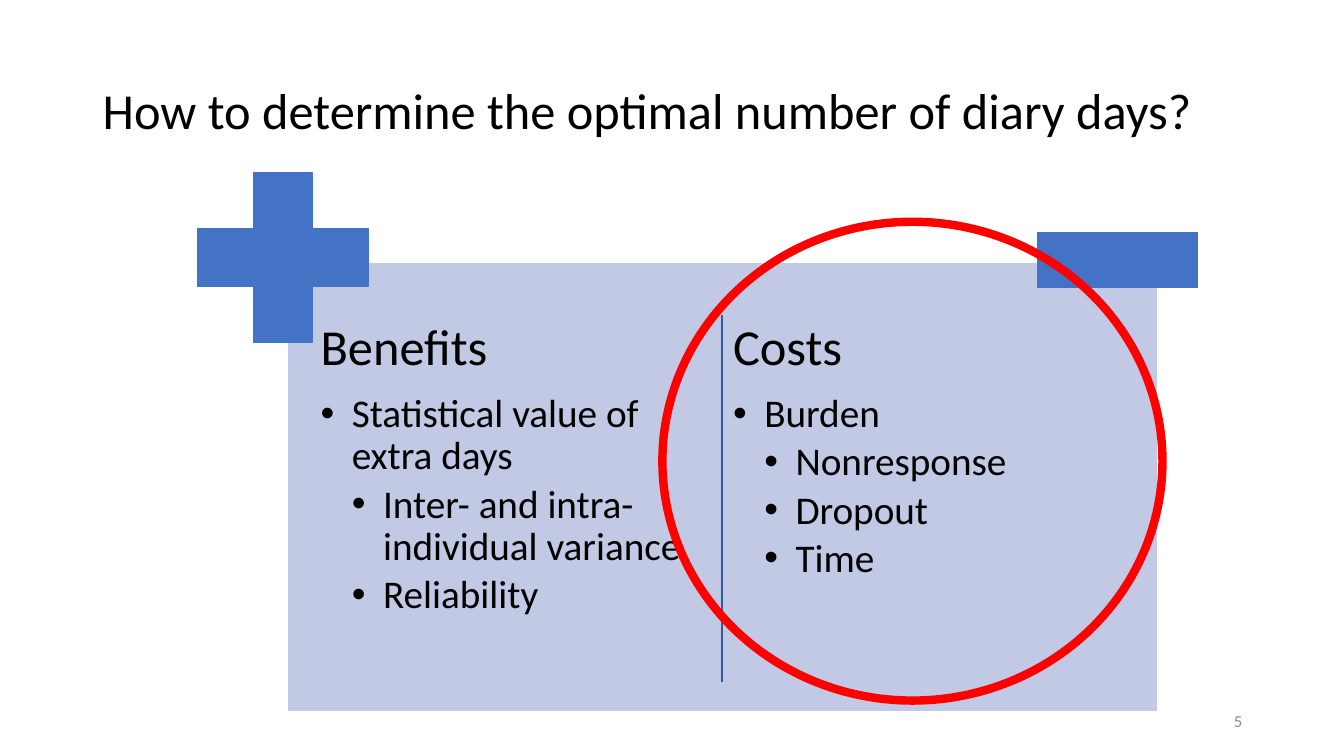
from lxml.etree import SubElement
from pptx import Presentation
from pptx.dml.color import RGBColor
from pptx.enum.shapes import MSO_CONNECTOR, MSO_SHAPE
from pptx.enum.text import MSO_ANCHOR, PP_ALIGN
from pptx.oxml.ns import qn
from pptx.util import Inches, Pt

INDENT = 0.31
COLUMN_LEFT, COLUMN_TOP, COLUMN_STEP = 3.11, 3.12, 4.09
COLUMN_WIDTH, COLUMN_HEIGHT = 4.01, 3.81
DIVIDER_X = COLUMN_LEFT + COLUMN_STEP - 0.04

columns = [
    [(0, "Benefits"), (1, "Statistical value of extra days"),
     (2, "Inter- and intra- individual variance"), (2, "Reliability")],
    [(0, "Costs"), (1, "Burden"), (2, "Nonresponse"), (2, "Dropout"), (2, "Time")],
]


def paint(format_, color):
    """Give a fill or a font one solid colour."""
    if hasattr(format_, "solid"):
        format_.solid()
        format_.fore_color.rgb = RGBColor.from_string(color)
    else:
        format_.color.rgb = RGBColor.from_string(color)


def add_text(box, paragraph, text, size, color="000000"):
    """Write one Calibri paragraph in a wrapping box."""
    box.text_frame.word_wrap = True
    paragraph.text = text
    paragraph.font.name = "Calibri"
    paragraph.font.size = Pt(size)
    paint(paragraph.font, color)


deck = Presentation()
deck.slide_width, deck.slide_height = Inches(13.33), Inches(7.5)
slide = deck.slides.add_slide(deck.slide_layouts[6])
shapes = slide.shapes

title = shapes.add_textbox(Inches(0.92), Inches(0.4), Inches(11.5), Inches(1.45))
title.text_frame.vertical_anchor = MSO_ANCHOR.MIDDLE
heading = title.text_frame.paragraphs[0]
heading.line_spacing = 0.9
add_text(title, heading, "How to determine the optimal number of diary days?", 36)

panel = shapes.add_shape(MSO_SHAPE.RECTANGLE, Inches(2.85), Inches(2.6), Inches(8.63), Inches(4.46))
paint(panel.fill, "C1C9E4")
paint(panel.line, "FFFFFF")
panel.line.width = Pt(1)
panel.shadow.inherit = False

for number, entries in enumerate(columns):
    column = shapes.add_textbox(Inches(COLUMN_LEFT + number * COLUMN_STEP), Inches(COLUMN_TOP),
                                Inches(COLUMN_WIDTH), Inches(COLUMN_HEIGHT))
    frame = column.text_frame
    frame.margin_left = frame.margin_right = frame.margin_top = frame.margin_bottom = Inches(0.07)
    for position, (level, text) in enumerate(entries):
        entry = frame.add_paragraph() if position else frame.paragraphs[0]
        entry.level = level
        entry.line_spacing = 0.9
        entry.space_after = Pt(4.2 if level else 12.6)
        if level:
            properties = entry._p.get_or_add_pPr()
            properties.set("marL", str(Inches(level * INDENT)))
            properties.set("indent", str(Inches(-INDENT)))
            SubElement(properties, qn("a:buFont"), typeface="Arial")
            SubElement(properties, qn("a:buChar"), char="•")
        add_text(column, entry, text, 28 if level else 36)

plus = shapes.add_shape(MSO_SHAPE.CROSS, Inches(1.96), Inches(1.71), Inches(1.69), Inches(1.69))
plus.adjustments[0] = 0.328
minus = shapes.add_shape(MSO_SHAPE.RECTANGLE, Inches(10.29), Inches(2.31), Inches(1.59), Inches(0.54))
for sign in (plus, minus):
    paint(sign.fill, "4472C4")
    paint(sign.line, "4472C4")
    sign.line.width = Pt(1)
    sign.shadow.inherit = False

divider = shapes.add_connector(MSO_CONNECTOR.STRAIGHT, Inches(DIVIDER_X), Inches(3.13),
                               Inches(DIVIDER_X), Inches(6.77))
paint(divider.line, "365B9D")
divider.line.width = Pt(1)
SubElement(divider._element.spPr, qn("a:effectLst"))

page = shapes.add_textbox(Inches(9.42), Inches(6.95), Inches(3), Inches(0.4))
page.text_frame.vertical_anchor = MSO_ANCHOR.MIDDLE
page_number = page.text_frame.paragraphs[0]
page_number.alignment = PP_ALIGN.RIGHT
add_text(page, page_number, "5", 12, "8C8C8C")

highlight = shapes.add_shape(MSO_SHAPE.OVAL, Inches(6.57), Inches(2.2), Inches(4.96), Inches(4.75))
highlight.fill.background()
paint(highlight.line, "FF0000")
highlight.line.width = Pt(6)
highlight.shadow.inherit = False

deck.save("out.pptx")
